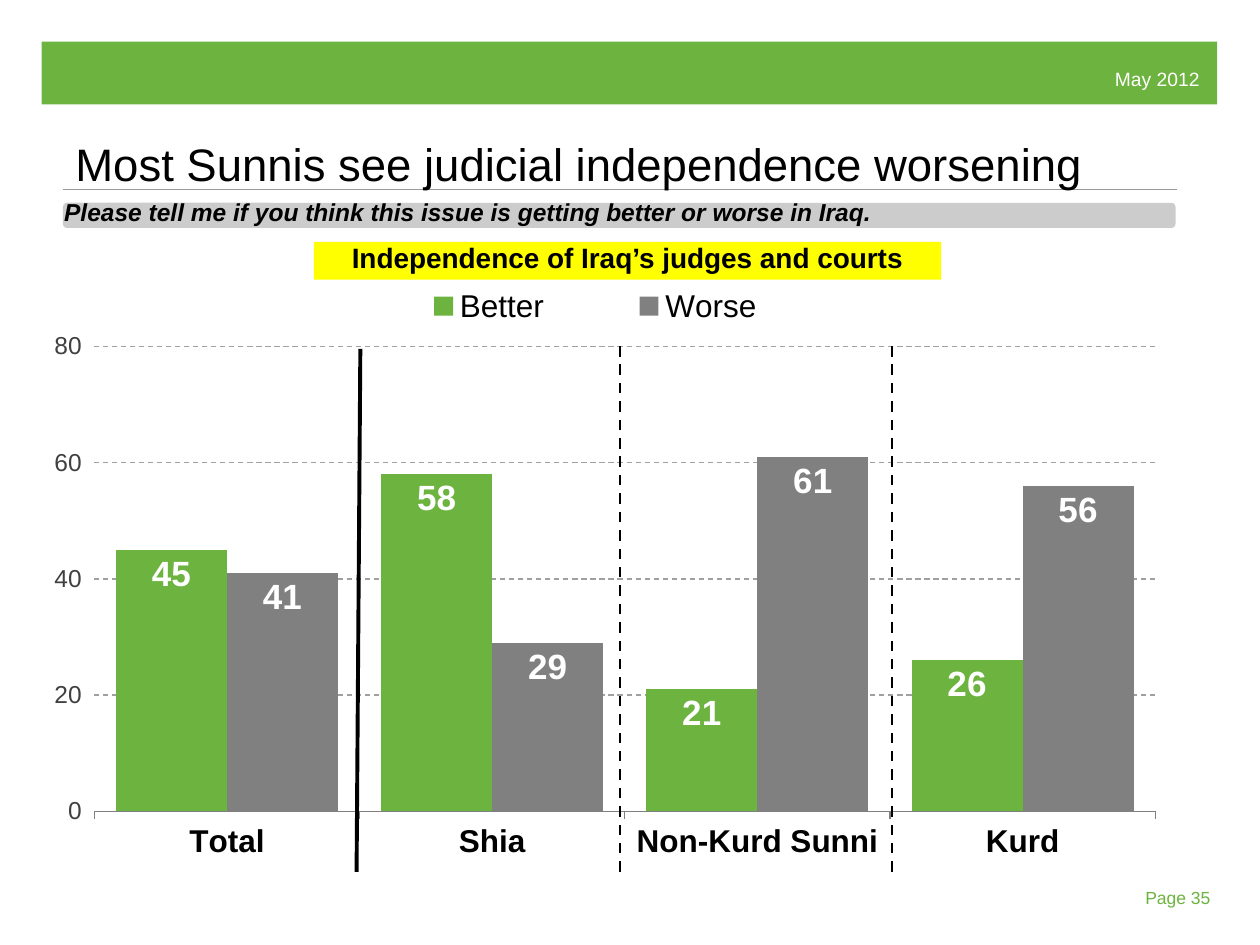
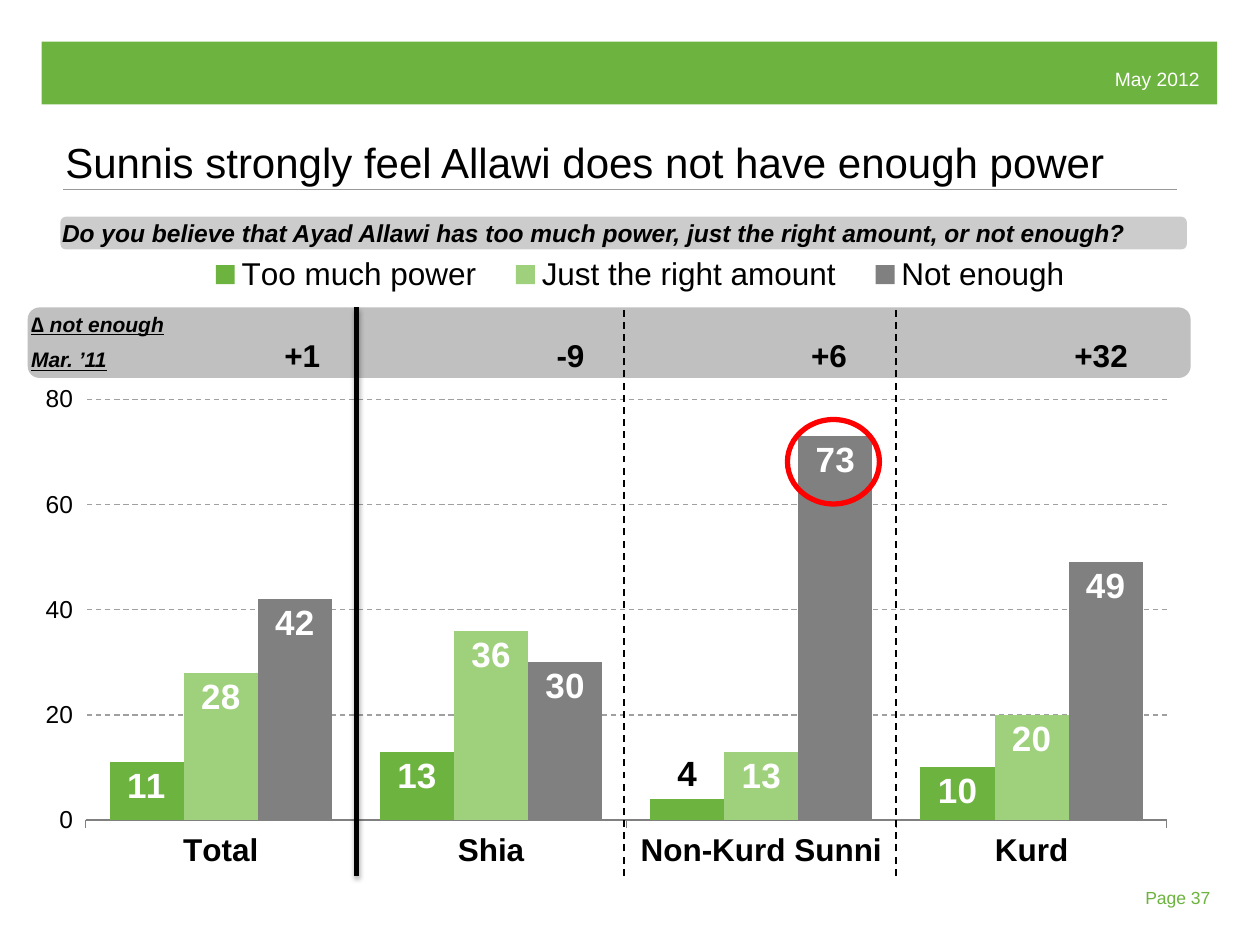
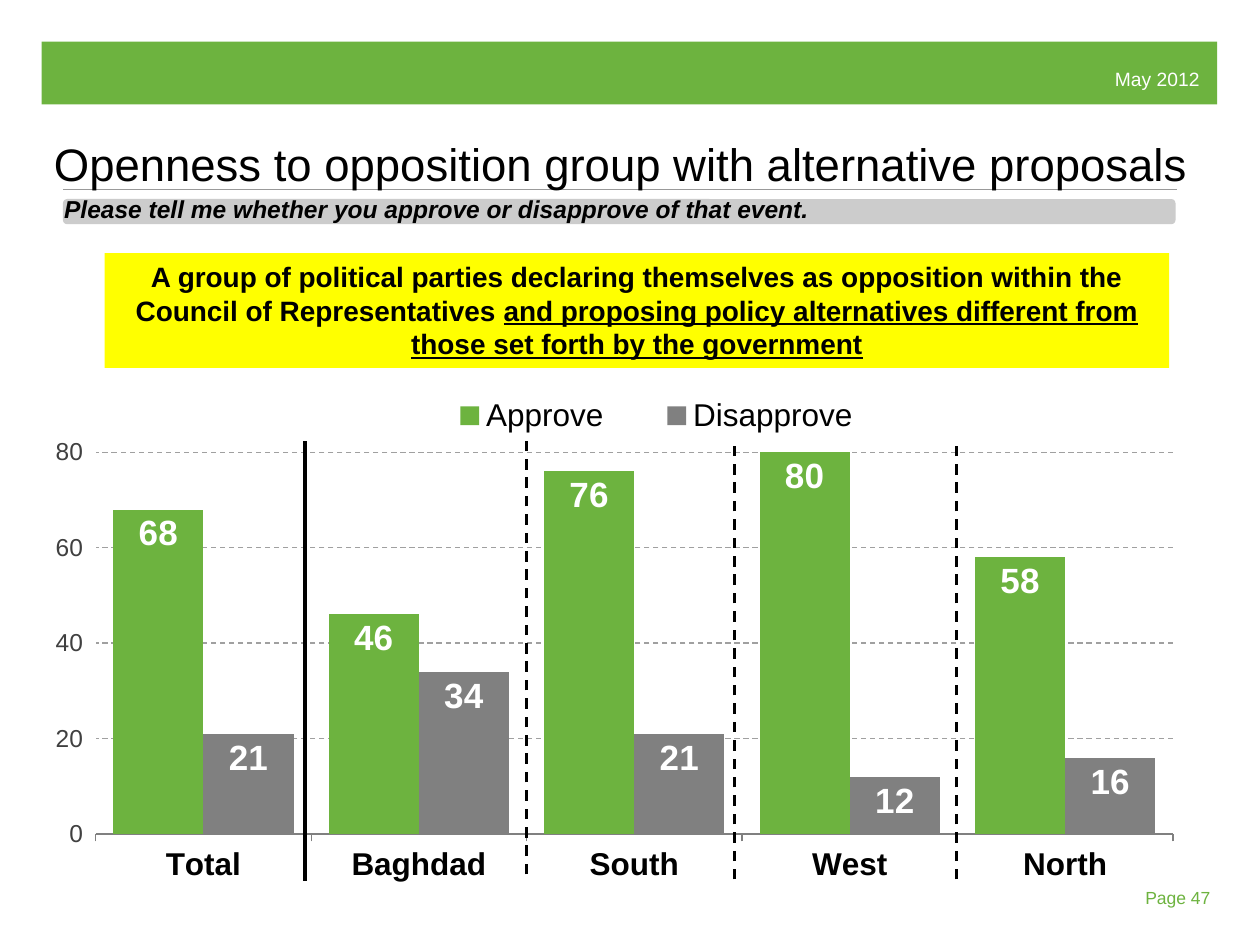
from lxml import etree
from pptx import Presentation
from pptx.chart.data import CategoryChartData
from pptx.dml.color import RGBColor
from pptx.enum.chart import XL_CHART_TYPE, XL_LABEL_POSITION, XL_LEGEND_POSITION, XL_TICK_MARK
from pptx.enum.dml import MSO_LINE
from pptx.enum.shapes import MSO_CONNECTOR, MSO_SHAPE
from pptx.enum.text import MSO_ANCHOR, PP_ALIGN
from pptx.oxml.ns import qn
from pptx.util import Inches, Pt

CLUSTERED = XL_CHART_TYPE.COLUMN_CLUSTERED
INSIDE_END, OUTSIDE_END = XL_LABEL_POSITION.INSIDE_END, XL_LABEL_POSITION.OUTSIDE_END
LEGEND_TOP = XL_LEGEND_POSITION.TOP
TICK_OUTSIDE, TICK_NONE = XL_TICK_MARK.OUTSIDE, XL_TICK_MARK.NONE
DASH, DOT = MSO_LINE.DASH, MSO_LINE.ROUND_DOT
STRAIGHT = MSO_CONNECTOR.STRAIGHT
RECTANGLE, ROUNDED, OVAL = MSO_SHAPE.RECTANGLE, MSO_SHAPE.ROUNDED_RECTANGLE, MSO_SHAPE.OVAL
TOP, MIDDLE = MSO_ANCHOR.TOP, MSO_ANCHOR.MIDDLE
LEFT, CENTER, RIGHT = PP_ALIGN.LEFT, PP_ALIGN.CENTER, PP_ALIGN.RIGHT

FONT = "Arial"
GREEN, LIGHT_GREEN, GRAY = "6DB33F", "9FD17D", "808080"
BLACK, WHITE, DARK, YELLOW, RED = "000000", "FFFFFF", "404040", "FFFF00", "FF0000"
QUESTION_GRAY, STRIP_GRAY, RULE_GRAY, GRID_GRAY = "CCCCCC", "C0C0C0", "999999", "A0A0A0"


def rgb(value):
    return RGBColor.from_string(value)


def style_font(font, size, color=BLACK, bold=False, italic=False, underline=False):
    font.name = FONT
    font.size = Pt(size)
    font.bold = bold
    font.italic = italic
    font.underline = underline
    font.color.rgb = rgb(color)


def write_text(shape, paragraphs, insets=(0.1, 0.05), anchor=TOP, align=LEFT,
               wrap=True, spacing=None, tabs=(), **style):
    frame = shape.text_frame
    frame.word_wrap = wrap
    frame.vertical_anchor = anchor
    frame.margin_left = frame.margin_right = Inches(insets[0])
    frame.margin_top = frame.margin_bottom = Inches(insets[1])
    for index, runs in enumerate(paragraphs):
        paragraph = frame.add_paragraph() if index else frame.paragraphs[0]
        if tabs:
            tab_list = etree.SubElement(paragraph._p.get_or_add_pPr(), qn("a:tabLst"))
            for position in tabs:
                etree.SubElement(tab_list, qn("a:tab"), pos=str(Inches(position)), algn="l")
        paragraph.alignment = align
        if spacing:
            paragraph.line_spacing = spacing
        for text, changes in runs:
            run = paragraph.add_run()
            run.text = text
            style_font(run.font, **{**style, **changes})


def set_layout(element, chart_box, box):
    layout = element.find(qn("c:layout"))
    if layout is None:
        layout = etree.Element(qn("c:layout"))
        position = element.find(qn("c:legendPos"))
        if position is None:
            element.insert(0, layout)
        else:
            position.addnext(layout)
    for child in list(layout):
        layout.remove(child)
    manual = etree.SubElement(layout, qn("c:manualLayout"))
    if element.tag == qn("c:plotArea"):
        etree.SubElement(manual, qn("c:layoutTarget"), val="inner")
    for name in ("xMode", "yMode"):
        etree.SubElement(manual, qn(f"c:{name}"), val="edge")
    left, top, width, height = chart_box
    fractions = {"x": (box[0] - left) / width, "y": (box[1] - top) / height,
                 "w": box[2] / width, "h": box[3] / height}
    for name, value in fractions.items():
        etree.SubElement(manual, qn(f"c:{name}"), val=f"{value:.4f}")


class Deck:
    def __init__(self):
        self.presentation = Presentation()
        self.presentation.slide_width = Inches(10)
        self.presentation.slide_height = Inches(7.5)
        self.slide = None

    def start_slide(self, page):
        self.slide = self.presentation.slides.add_slide(self.presentation.slide_layouts[6])
        self.shape(RECTANGLE, (0.33, 0.33, 9.33, 0.5), fill=GREEN)
        self.text((8.74, 0.53, 0.88, 0.19), "May 2012", size=11, color=WHITE,
                  insets=(0.1, 0), align=RIGHT, wrap=False)
        self.line((0.5, 1.5), (9.33, 1.5), 0.25, color=RULE_GRAY, dash=DOT)
        self.text((9.09, 7, 0.57, 0.25), f"Page {page}", size=10, color=GREEN,
                  insets=(0, 0), anchor=MIDDLE)

    def text(self, box, text, **style):
        shape = self.slide.shapes.add_textbox(*map(Inches, box))
        write_text(shape, [[(text, {})]], **style)

    def title(self, left, text, size=26):
        self.text((left, 1, 9.6, 0.45), text, size=size, insets=(0.1, 0.08))

    def shape(self, kind, box, fill=None, outline=None, width=1):
        shape = self.slide.shapes.add_shape(kind, *map(Inches, box))
        shape.shadow.inherit = False
        if fill:
            shape.fill.solid()
            shape.fill.fore_color.rgb = rgb(fill)
        else:
            shape.fill.background()
        if outline:
            shape.line.color.rgb = rgb(outline)
            shape.line.width = Pt(width)
        else:
            shape.line.fill.background()
        return shape

    def question(self, box, text, spacing=None):
        write_text(self.shape(ROUNDED, box, QUESTION_GRAY), [[(text, {})]], insets=(0, 0),
                   anchor=MIDDLE, spacing=spacing, size=14, bold=True, italic=True)

    def highlight(self, box, runs, spacing=None):
        write_text(self.shape(RECTANGLE, box, YELLOW), [runs], align=CENTER,
                   spacing=spacing, size=16, bold=True)

    def line(self, start, end, width, color=BLACK, dash=None, shadow=False):
        connector = self.slide.shapes.add_connector(STRAIGHT, *map(Inches, start + end))
        connector.line.color.rgb = rgb(color)
        connector.line.width = Pt(width)
        if dash:
            connector.line.dash_style = dash
        effects = etree.SubElement(connector._element.spPr, qn("a:effectLst"))
        if shadow:
            outer = etree.SubElement(effects, qn("a:outerShdw"), blurRad=str(Pt(3.1)),
                                     dist=str(Pt(1.8)), dir="5400000", rotWithShape="0")
            shade = etree.SubElement(outer, qn("a:srgbClr"), val=BLACK)
            etree.SubElement(shade, qn("a:alpha"), val="35000")

    def chart(self, box, plot_box, legend_box, categories, series, gap=39, axis_color=DARK):
        data = CategoryChartData(number_format="General")
        data.categories = categories
        for name, values, _ in series:
            data.add_series(name, values)
        frame = self.slide.shapes.add_chart(CLUSTERED, *map(Inches, box), data)
        chart = frame.chart
        chart.has_title = False
        style_font(chart.font, 14)
        chart.has_legend = True
        chart.legend.position = LEGEND_TOP
        chart.legend.include_in_layout = False
        style_font(chart.legend.font, 18)
        set_layout(chart.legend._element, box, legend_box)
        set_layout(chart._chartSpace.chart.plotArea, box, plot_box)

        category_axis, value_axis = chart.category_axis, chart.value_axis
        category_axis.major_tick_mark = TICK_OUTSIDE
        category_axis.minor_tick_mark = TICK_NONE
        category_axis.format.line.color.rgb = rgb(GRAY)
        style_font(category_axis.tick_labels.font, 18, bold=True)
        value_axis.minimum_scale, value_axis.maximum_scale = 0, 80
        value_axis.major_unit = 20
        value_axis.major_tick_mark = TICK_OUTSIDE
        value_axis.minor_tick_mark = TICK_NONE
        value_axis.format.line.fill.background()
        style_font(value_axis.tick_labels.font, 14, axis_color)
        grid = value_axis.major_gridlines.format.line
        grid.color.rgb = rgb(GRID_GRAY)
        grid.width = Pt(0.75)
        grid.dash_style = DASH

        plot = chart.plots[0]
        plot.gap_width = gap
        plot.overlap = 0
        plot.vary_by_categories = False
        for bars, (_, _, color) in zip(plot.series, series):
            bars.format.fill.solid()
            bars.format.fill.fore_color.rgb = rgb(color)
            bars.invert_if_negative = False
            labels = bars.data_labels
            labels.show_value = True
            labels.position = INSIDE_END
            style_font(labels.font, 20, WHITE, bold=True)
        return chart


def judges_slide(deck):
    deck.start_slide(35)
    deck.chart((0.08, 1.81, 9.27, 5.27), (0.75, 2.75, 8.42, 3.69), (2.77, 2.23, 3.91, 0.4),
               ["Total", "Shia", "Non-Kurd Sunni", "Kurd"],
               [("Better", (45, 58, 21, 26), GREEN), ("Worse", (41, 29, 61, 56), GRAY)])
    for x in (4.92, 7.08):
        deck.line((x, 6.92), (x, 2.75), 1.5, dash=DASH)
    deck.title(0.5, "Most Sunnis see judicial independence worsening")
    deck.question((0.5, 1.61, 8.83, 0.2),
                  "Please tell me if you think this issue is getting better or worse in Iraq.", 0.75)
    deck.highlight((2.49, 1.92, 4.98, 0.3),
                   [("Independence of Iraq’s judges and courts", {})], 0.75)
    deck.line((2.83, 6.92), (2.86, 2.77), 2.25)


def allawi_slide(deck):
    deck.start_slide(37)
    deck.title(0.42, "Sunnis strongly feel Allawi does not have enough power", 24)
    chart = deck.chart((0.19, 1.42, 9.23, 5.58), (0.68, 3.17, 8.58, 3.34), (1.48, 1.98, 7.2, 0.4),
                       ["Total", "Shia", "Non-Kurd Sunni", "Kurd"],
                       [("Too much power", (11, 13, 4, 10), GREEN),
                        ("Just the right amount", (28, 36, 13, 20), LIGHT_GREEN),
                        ("Not enough", (42, 30, 73, 49), GRAY)], gap=65, axis_color=BLACK)
    short_bar_label = chart.plots[0].series[0].points[2].data_label
    style_font(short_bar_label.font, 20, bold=True)
    short_bar_label.position = OUTSIDE_END
    deck.question((0.48, 1.72, 8.94, 0.26),
                  "Do you believe that Ayad Allawi has too much power, just the right amount, or not enough?")
    strip = deck.shape(ROUNDED, (0.22, 2.44, 9.23, 0.56), STRIP_GRAY)
    changes = {"size": 18, "italic": False, "underline": False}
    write_text(strip, [[("∆ not enough", {})],
                       [("Mar. ’11", {}), ("\t+1\t-9\t+6\t+32", changes)]],
               insets=(0, 0), anchor=MIDDLE, tabs=(2.01, 4.17, 6.19, 8.28),
               size=12, bold=True, italic=True, underline=True)
    deck.shape(OVAL, (6.25, 3.33, 0.73, 0.67), outline=RED, width=3)
    deck.line((2.83, 6.95), (2.83, 2.44), 3, shadow=True)
    for x in (4.95, 7.11):
        deck.line((x, 6.95), (x, 2.44), 1, dash=DASH)


def opposition_slide(deck):
    deck.start_slide(47)
    deck.chart((0.08, 1.98, 9.42, 5.27), (0.76, 3.59, 8.55, 3.03), (3.23, 3.1, 3.96, 0.4),
               ["Total", "Baghdad", "South", "West", "North"],
               [("Approve", (68, 46, 76, 80, 58), GREEN),
                ("Disapprove", (21, 34, 21, 12, 16), GRAY)])
    deck.title(0.33, "Openness to opposition group with alternative proposals")
    deck.question((0.5, 1.58, 8.83, 0.2),
                  "Please tell me whether you approve or disapprove of that event.", 0.75)
    deck.line((2.42, 6.99), (2.42, 3.5), 2.5)
    for x, bottom in ((4.18, 6.94), (5.83, 6.98), (7.59, 6.98)):
        deck.line((x, bottom), (x, 3.5), 1.5, dash=DASH)
    deck.highlight((0.83, 2.01, 8.45, 0.91), [
        ("A group of political parties declaring themselves as opposition within the "
         "Council of Representatives ", {}),
        ("and proposing policy alternatives different from those set forth by the government",
         {"underline": True})])


def main():
    deck = Deck()
    judges_slide(deck)
    allawi_slide(deck)
    opposition_slide(deck)
    deck.presentation.save("out.pptx")


if __name__ == "__main__":
    main()
